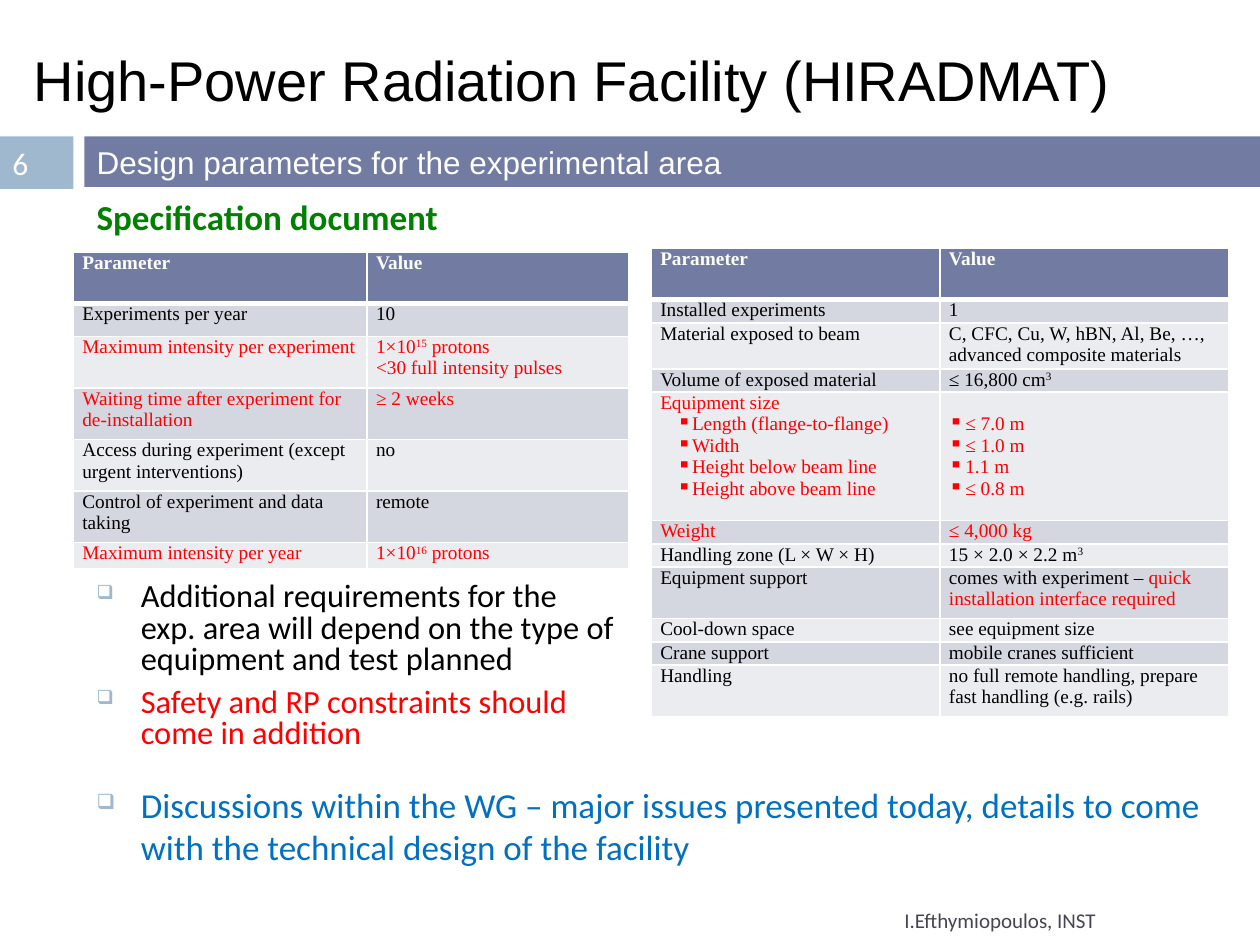
from lxml import etree
from pptx import Presentation
from pptx.dml.color import RGBColor
from pptx.enum.shapes import MSO_SHAPE
from pptx.enum.text import MSO_ANCHOR, PP_ALIGN
from pptx.oxml.ns import qn
from pptx.util import Cm, Pt

# Content: ^...^ is superscript, |...| is red
TITLE = "High-Power Radiation Facility (HIRADMAT)"
SUBTITLE = "Design parameters for the experimental area"
SECTION = "Specification document"
PAGE = "6"
AUTHOR = "I.Efthymiopoulos, INST"
REQUIREMENTS = [
    "Additional requirements for the exp. area will depend on the type of equipment and test planned",
    "|Safety and RP constraints should come in addition|",
]
OUTLOOK = ["Discussions within the WG – major issues presented today, "
           "details to come with the technical design of the facility"]

# Rows: height in cm, parameter, value; a list holds several paragraphs
HEADER = (1.04, "Parameter", "Value")
OPERATION = [
    HEADER,
    (0.66, "Experiments per year", "10"),
    (1.04, "|Maximum intensity per experiment|",
     ["|1×10^15^ protons|", "|<30 full intensity pulses|"]),
    (1.04, "|Waiting time after experiment for de-installation|", "|≥ 2 weeks|"),
    (1.04, "Access during experiment (except urgent interventions)", "no"),
    (1.04, "Control of experiment and data taking", "remote"),
    (0.53, "|Maximum intensity per year|", "|1×10^16^ protons|"),
]
EQUIPMENT = [
    HEADER,
    (0.43, "Installed experiments", "1"),
    (0.86, "Material exposed to beam",
     "C, CFC, Cu, W, hBN, Al, Be, …, advanced composite materials"),
    (0.43, "Volume of exposed material", "≤ 16,800 cm^3^"),
    (2.59, ["|Equipment size|", "▪|Length (flange-to-flange)|", "▪|Width|",
            "▪|Height below beam line|", "▪|Height above beam line|"],
     ["▪|≤ 7.0 m|", "▪|≤ 1.0 m|", "▪|1.1 m|", "▪|≤ 0.8 m|"]),
    (0.43, "|Weight|", "|≤ 4,000 kg|"),
    (0.43, "Handling zone (L × W × H)", "15 × 2.0 × 2.2 m^3^"),
    (1.04, "Equipment support",
     "comes with experiment – |quick installation interface required|"),
    (0.43, "Cool-down space", "see equipment size"),
    (0.43, "Crane support", "mobile cranes sufficient"),
    (1.04, "Handling", "no full remote handling, prepare fast handling (e.g. rails)"),
]

COLORS = {
    "black": "000000", "white": "FFFFFF", "red": "FF0000", "green": "008000",
    "blue": "0070C0", "slate": "464653", "band": "727CA3", "page": "9FB8CD",
    "odd": "D5D7E0", "even": "EBECF0",
}
LINE_HEIGHT = 0.43
INDENT = 0.89


def rgb(name):
    return RGBColor.from_string(COLORS[name])


def set_bullet(paragraph, char, left, hang, color=None, percent=None):
    props = paragraph._p.get_or_add_pPr()
    props.set("marL", str(Cm(left)))
    props.set("indent", str(-Cm(hang)))
    if color:
        holder = etree.SubElement(props, qn("a:buClr"))
        etree.SubElement(holder, qn("a:srgbClr"), val=COLORS[color])
    if percent:
        etree.SubElement(props, qn("a:buSzPct"), val=str(percent * 1000))
    etree.SubElement(props, qn("a:buChar"), char=char)


def write(frame, text, *, size, font="Calibri", color="black", bold=False,
          spacing=None, before=0, bullet=None):
    """Fill a text frame; bullet holds the keyword arguments of set_bullet."""
    frame.word_wrap = True
    lines = [text] if isinstance(text, str) else text
    for number, line in enumerate(lines):
        paragraph = frame.add_paragraph() if number else frame.paragraphs[0]
        paragraph.alignment = PP_ALIGN.LEFT
        paragraph.space_before = Pt(before)
        if spacing:
            paragraph.line_spacing = spacing
        if bullet and (bullet["char"] != "▪" or line.startswith("▪")):
            set_bullet(paragraph, **bullet)
        for i, tinted in enumerate(line.lstrip("▪").split("|")):
            for j, part in enumerate(tinted.split("^")):
                if not part:
                    continue
                run = paragraph.add_run()
                run.text = part
                run.font.size, run.font.name, run.font.bold = Pt(size), font, bold
                run.font.color.rgb = rgb("red" if i % 2 else color)
                if j % 2:
                    run._r.get_or_add_rPr().set("baseline", "30000")


def add_text(slide, text, box, anchor=MSO_ANCHOR.TOP, fill=None, **style):
    lengths = [Cm(v) for v in box]
    if fill:
        shape = slide.shapes.add_shape(MSO_SHAPE.RECTANGLE, *lengths)
        shape.shadow.inherit = False
        shape.fill.solid()
        shape.fill.fore_color.rgb = rgb(fill)
        shape.line.fill.background()
    else:
        shape = slide.shapes.add_textbox(*lengths)
    shape.text_frame.vertical_anchor = anchor
    write(shape.text_frame, text, **style)


def set_borders(cell, row):
    widths = {"L": 1, "R": 1, "T": 3 if row == 1 else 1, "B": 1 if row else 3}
    props = cell._tc.get_or_add_tcPr()
    for place, (side, width) in enumerate(widths.items()):
        line = etree.Element(qn("a:ln" + side), w=str(Pt(width)))
        fill = etree.SubElement(line, qn("a:solidFill"))
        etree.SubElement(fill, qn("a:srgbClr"), val=COLORS["white"])
        props.insert(place, line)


def add_parameters(slide, rows, left, top, widths):
    height = sum(row[0] for row in rows)
    table = slide.shapes.add_table(len(rows), len(widths), Cm(left), Cm(top),
                                   Cm(sum(widths)), Cm(height)).table
    for column, width in zip(table.columns, widths):
        column.width = Cm(width)
    for r, (row_height, *texts) in enumerate(rows):
        table.rows[r].height = Cm(row_height)
        for c, text in enumerate(texts):
            cell = table.cell(r, c)
            cell.margin_left = cell.margin_right = Cm(0.18)
            # A value list that opens with a bullet starts one line lower
            cell.margin_top = Cm(LINE_HEIGHT if text[0].startswith("▪") else 0)
            cell.margin_bottom = 0
            cell.fill.solid()
            cell.fill.fore_color.rgb = rgb(("even", "odd")[r % 2] if r else "band")
            set_borders(cell, r)
            write(cell.text_frame, text, size=11, font="Times New Roman",
                  color="black" if r else "white", bold=r == 0,
                  bullet={"char": "▪", "left": 0.33 if c else 0.64,
                          "hang": 0.33 if c else 0.3})


prs = Presentation()
prs.slide_width, prs.slide_height = Cm(25.4), Cm(19.05)
slide = prs.slides.add_slide(prs.slide_layouts[6])
middle = MSO_ANCHOR.MIDDLE
checkbox = {"char": "❑", "left": INDENT, "hang": INDENT, "color": "page", "percent": 60}

# Heading
add_text(slide, TITLE, (0.43, 0.64, 24.97, 1.9), middle, size=32, font="Arial")
add_text(slide, PAGE, (0, 2.75, 1.48, 1.06), middle, "page", size=18, color="white")
add_text(slide, SUBTITLE, (1.7, 2.75, 23.7, 1.02), middle, "band",
         size=18, font="Arial", color="white")
add_text(slide, SECTION, (1.7, 3.81, 23.7, 1.27), size=20, color="green", bold=True)

# Parameter tables
add_parameters(slide, OPERATION, 1.48, 5.08, (5.92, 5.28))
add_parameters(slide, EQUIPMENT, 13.13, 5, (5.82, 5.82))

# Remarks
add_text(slide, REQUIREMENTS, (1.7, 11.63, 11, 3.81), size=18.5,
         spacing=0.8, before=7, bullet=checkbox)
add_text(slide, OUTLOOK, (1.7, 15.67, 23.06, 2.34), size=20, color="blue",
         before=7, bullet=checkbox)

# Footer
add_text(slide, AUTHOR, (17.98, 18.03, 7.42, 1.02), middle, size=12, color="slate")

prs.save("out.pptx")
